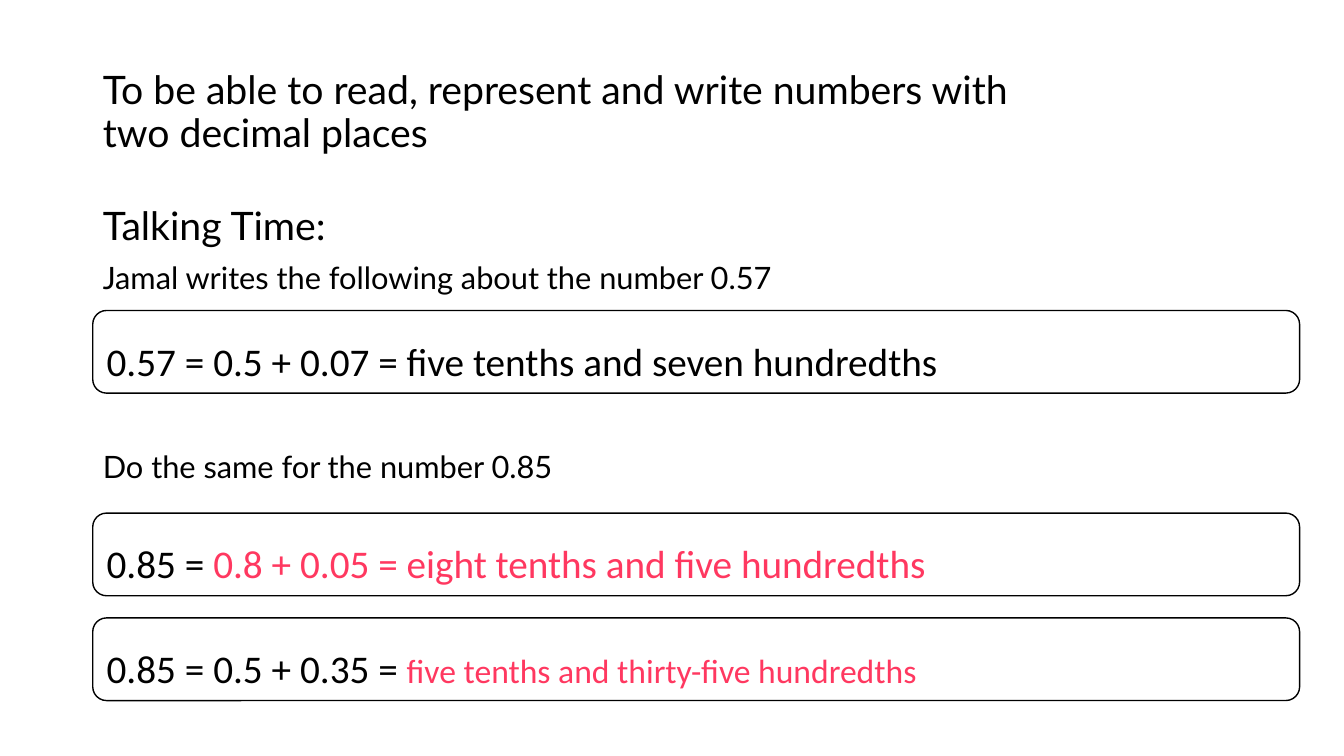
from dataclasses import dataclass

from lxml import etree
from pptx import Presentation
from pptx.dml.color import RGBColor
from pptx.enum.shapes import MSO_SHAPE
from pptx.enum.text import MSO_ANCHOR, MSO_AUTO_SIZE, PP_ALIGN
from pptx.oxml.ns import qn
from pptx.util import Inches, Pt

ROUNDED = MSO_SHAPE.ROUNDED_RECTANGLE
MIDDLE, TOP, BOTTOM = MSO_ANCHOR.MIDDLE, MSO_ANCHOR.TOP, MSO_ANCHOR.BOTTOM
LEFT = PP_ALIGN.LEFT
NO_FIT = MSO_AUTO_SIZE.NONE


@dataclass(frozen=True)
class Theme:
    ink: RGBColor = RGBColor(0, 0, 0)
    answer: RGBColor = RGBColor(0xFF, 0x38, 0x60)
    paper: RGBColor = RGBColor(255, 255, 255)
    text_font: str = "Lato"
    box_font: str = "Calibri"
    large: int = 28
    medium: int = 24
    small: int = 22


THEME = Theme()

TITLE = "To be able to read, represent and write numbers with two decimal places"
# text, size, space before in points (the last leaves room for the first box)
BODY = [
    ("Talking Time:", THEME.large, 0),
    ("Jamal writes the following about the number 0.57", THEME.small, 10),
    ("Do the same for the number 0.85", THEME.small, 111),
]
# top, then runs of text, size and colour
BOXES = [
    (3.08, [("0.57 = 0.5 + 0.07 = five tenths and seven hundredths", THEME.large, THEME.ink)]),
    (5.09, [("0.85 = ", THEME.large, THEME.ink),
            ("0.8 + 0.05 = eight tenths and five hundredths", THEME.large, THEME.answer)]),
    (6.13, [("0.85 = 0.5 + 0.35 = ", THEME.large, THEME.ink),
            ("five tenths and thirty-five hundredths", THEME.medium, THEME.answer)]),
]
MARGIN = 0.92
BOX_WIDTH, BOX_HEIGHT = 11.97, 0.82


def style_font(font, name, size, color):
    font.name = name
    font.size = Pt(size)
    font.color.rgb = color


def place(shape, left, top, width, height, anchor):
    shape.left, shape.top = Inches(left), Inches(top)
    shape.width, shape.height = Inches(width), Inches(height)
    frame = shape.text_frame
    frame.word_wrap = True
    frame.auto_size = NO_FIT
    frame.vertical_anchor = anchor
    return frame


def format_paragraph(paragraph, line_spacing, before=0):
    paragraph.alignment = LEFT
    paragraph.line_spacing = line_spacing
    paragraph.space_before = Pt(before)


def add_title(slide):
    frame = place(slide.shapes.title, MARGIN, 0.4, 9.6, 1.45, MIDDLE)
    frame.text = TITLE
    paragraph = frame.paragraphs[0]
    format_paragraph(paragraph, 0.9)
    style_font(paragraph.runs[0].font, THEME.text_font, THEME.large, THEME.ink)


def add_body(slide):
    frame = place(slide.placeholders[1], MARGIN, 2, 11.5, 4.76, TOP)
    frame.text = "\n".join(text for text, _, _ in BODY)
    for paragraph, (_, size, before) in zip(frame.paragraphs, BODY):
        format_paragraph(paragraph, 0.9, before)
        properties = paragraph._p.get_or_add_pPr()
        properties.set("marL", "0")
        properties.set("indent", "0")
        etree.SubElement(properties, qn("a:buNone"))
        style_font(paragraph.runs[0].font, THEME.text_font, size, THEME.ink)


def add_box(slide, top, runs):
    box = slide.shapes.add_shape(ROUNDED, 0, 0, 0, 0)
    frame = place(box, MARGIN, top, BOX_WIDTH, BOX_HEIGHT, BOTTOM)
    box.shadow.inherit = False
    box.fill.solid()
    box.fill.fore_color.rgb = THEME.paper
    box.line.color.rgb = THEME.ink
    box.line.width = Pt(1)
    paragraph = frame.paragraphs[0]
    format_paragraph(paragraph, 1.5)
    for text, size, color in runs:
        run = paragraph.add_run()
        run.text = text
        style_font(run.font, THEME.box_font, size, color)


def main():
    presentation = Presentation()
    presentation.slide_width = Inches(13.33)
    presentation.slide_height = Inches(7.5)
    slide = presentation.slides.add_slide(presentation.slide_layouts[1])
    add_title(slide)
    add_body(slide)
    for top, runs in BOXES:
        add_box(slide, top, runs)
    presentation.save("out.pptx")


if __name__ == "__main__":
    main()
